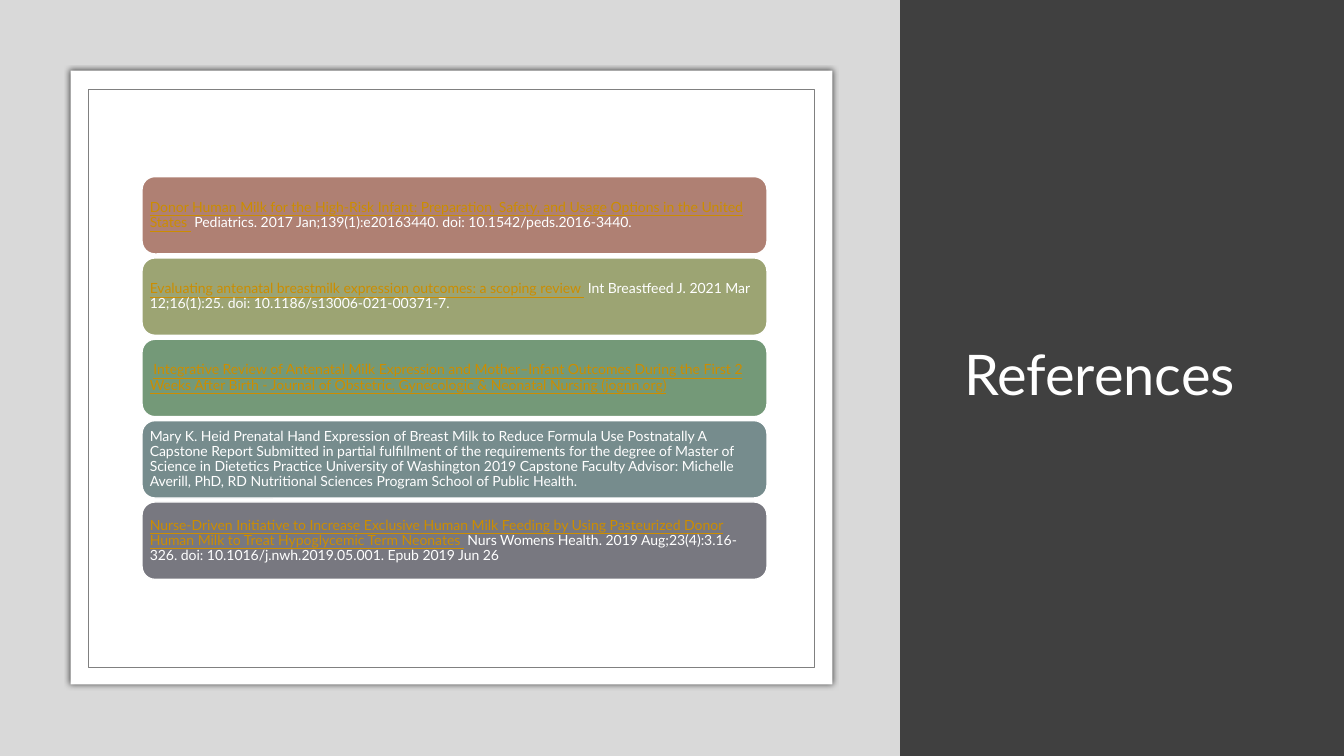
import pptx
import pptx.util
import pptx.dml.color
import pptx.enum.shapes
import pptx.enum.text
import pptx.oxml
import pptx.oxml.ns

Cm, Pt = pptx.util.Cm, pptx.util.Pt
Shapes = pptx.enum.shapes.MSO_SHAPE

COLORS = {
    "dark": "404040", "light": "D9D9D9", "white": "FFFFFF",
    "frame": "808080", "link": "CC8D00",
    "clay": "AF8073", "olive": "9CA473", "green": "749978",
    "teal": "768C8D", "slate": "787880",
}

# Each reference: card colour, then (text, run colour) pairs
REFERENCES = [
    ("clay", [
        ("Donor Human Milk for the High-Risk Infant: Preparation, Safety, and Usage "
         "Options in the United States ", "link"),
        (" Pediatrics. 2017 Jan;139(1):e20163440. doi: 10.1542/peds.2016-3440.", "white")]),
    ("olive", [
        ("Evaluating antenatal breastmilk expression outcomes: a scoping review ", "link"),
        (" Int Breastfeed J. 2021 Mar 12;16(1):25. doi: 10.1186/s13006-021-00371-7.", "white")]),
    ("green", [
        (" ", "white"),
        ("Integrative Review of Antenatal Milk Expression and Mother–Infant Outcomes "
         "During the First 2 Weeks After Birth - Journal of Obstetric, Gynecologic & "
         "Neonatal Nursing (jognn.org)", "link")]),
    ("teal", [
        ("Mary K. Heid Prenatal Hand Expression of Breast Milk to Reduce Formula Use "
         "Postnatally A Capstone Report Submitted in partial fulfillment of the "
         "requirements for the degree of Master of Science in Dietetics Practice "
         "University of Washington 2019 Capstone Faculty Advisor: Michelle Averill, "
         "PhD, RD Nutritional Sciences Program School of Public Health.", "white")]),
    ("slate", [
        ("Nurse-Driven Initiative to Increase Exclusive Human Milk Feeding by Using "
         "Pasteurized Donor Human Milk to Treat Hypoglycemic Term Neonates ", "link"),
        (" Nurs Womens Health. 2019 Aug;23(4):3.16-326. doi: 10.1016/j.nwh.2019.05.001. "
         "Epub 2019 Jun 26", "white")]),
]


class SlideBuilder:
    """Holds the text style and the current slide."""

    font_name = "Lato"
    line_spacing = 0.9

    def __init__(self, slide):
        self.slide = slide

    def color(self, name):
        return pptx.dml.color.RGBColor.from_string(COLORS[name])

    def panel(self, box, fill, line=None, line_width=1, kind=Shapes.RECTANGLE):
        shape = self.slide.shapes.add_shape(kind, *map(Cm, box))
        shape.shadow.inherit = False
        shape.fill.solid()
        shape.fill.fore_color.rgb = self.color(fill)
        if line:
            shape.line.color.rgb = self.color(line)
            shape.line.width = Pt(line_width)
        else:
            shape.line.fill.background()
        return shape

    def glow(self, shape, blur, opacity):
        effects = shape._element.spPr.find(pptx.oxml.ns.qn("a:effectLst"))
        effects.append(pptx.oxml.parse_xml(
            f'<a:outerShdw {pptx.oxml.ns.nsdecls("a")} blurRad="{Pt(blur)}" dist="0" '
            f'algn="ctr" rotWithShape="0"><a:srgbClr val="000000">'
            f'<a:alpha val="{opacity * 1000}"/></a:srgbClr></a:outerShdw>'))

    def set_text(self, shape, runs, size, margins):
        frame = shape.text_frame
        frame_format = {"word_wrap": True,
                        "vertical_anchor": pptx.enum.text.MSO_ANCHOR.MIDDLE}
        for side, margin in zip(("left", "top", "right", "bottom"), margins):
            frame_format[f"margin_{side}"] = Cm(margin)
        for name, value in frame_format.items():
            setattr(frame, name, value)
        paragraph = frame.paragraphs[0]
        paragraph.alignment = pptx.enum.text.PP_ALIGN.LEFT
        paragraph.line_spacing = self.line_spacing
        for text, color in runs:
            run = paragraph.add_run()
            run.text = text
            run_format = {"name": self.font_name, "size": Pt(size),
                          "underline": color == "link"}
            for name, value in run_format.items():
                setattr(run.font, name, value)
            run.font.color.rgb = self.color(color)

    def title(self, box, text):
        shape = self.slide.shapes.add_textbox(*map(Cm, box))
        self.set_text(shape, [(text, "white")], 40, (0.25, 0.13, 0.25, 0.13))

    def card(self, box, fill, runs):
        shape = self.panel(box, fill, "white", kind=Shapes.ROUNDED_RECTANGLE)
        self.set_text(shape, runs, 10, (0.1,) * 4)


def main():
    presentation = pptx.Presentation()
    presentation.slide_width, presentation.slide_height = Cm(33.87), Cm(19.05)
    builder = SlideBuilder(presentation.slides.add_slide(presentation.slide_layouts[6]))

    # Background and title
    builder.panel((0, 0, 33.87, 19.05), "dark")
    builder.title((24.05, 1.78, 8.03, 15.47), "References")
    builder.panel((0, 0, 22.68, 19.05), "light")

    # Framed white sheet
    sheet = builder.panel((1.78, 1.78, 19.2, 15.47), "white")
    builder.glow(sheet, blur=4, opacity=66)
    builder.panel((2.24, 2.26, 18.29, 14.55), "white", "frame", 0.5)

    # Reference cards
    top, pitch = 4.45, 2.05
    for index, (fill, runs) in enumerate(REFERENCES):
        builder.card((3.58, top + index * pitch, 15.75, 1.95), fill, runs)

    presentation.save("out.pptx")


if __name__ == "__main__":
    main()
